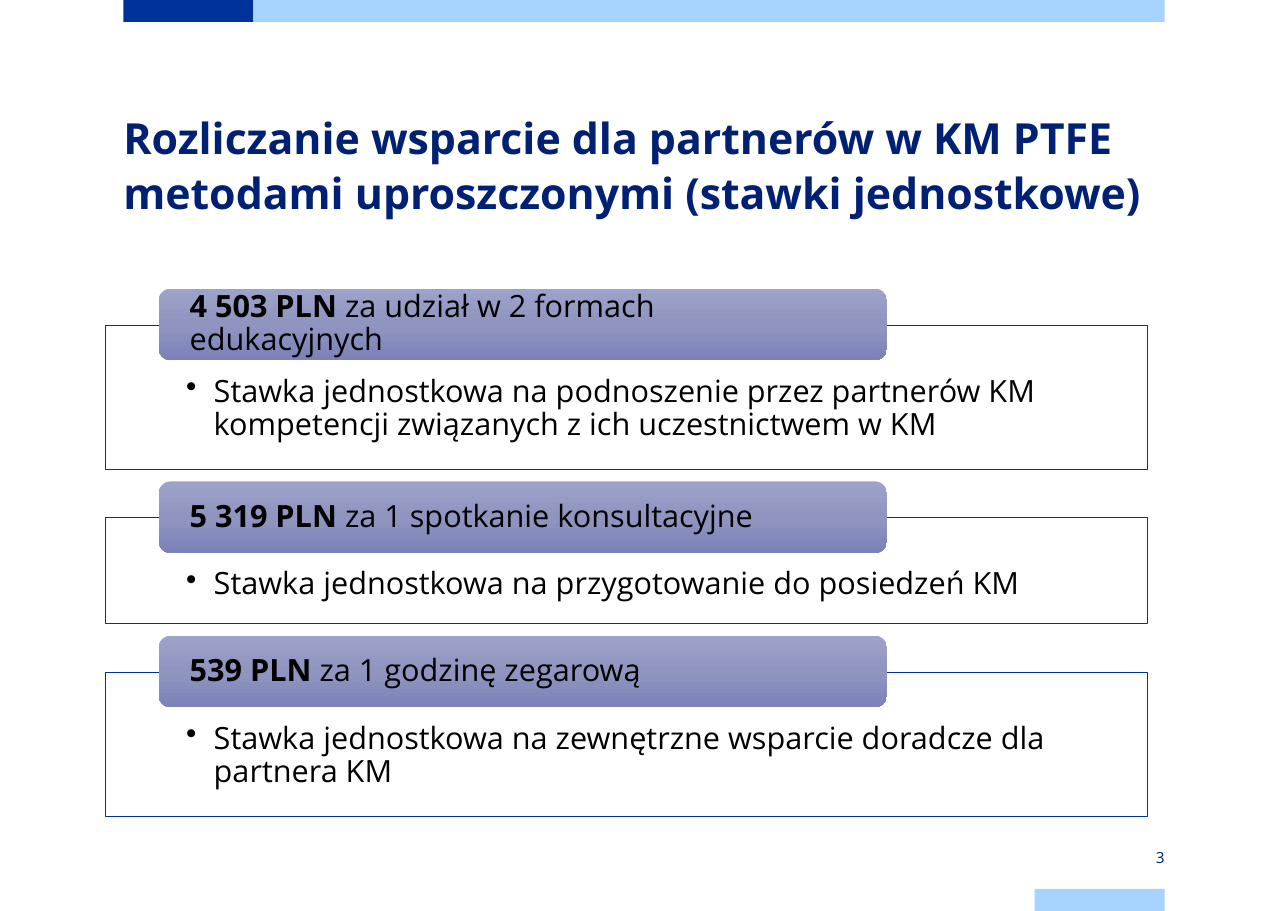
from copy import deepcopy
from dataclasses import dataclass

from lxml import etree
from pptx import Presentation
from pptx import util as u
from pptx.dml.color import RGBColor
from pptx.enum import shapes, text
from pptx.oxml.ns import qn

FONT = "Open Sans"
NAVY = RGBColor(0x00, 0x20, 0x73)
BLUE = RGBColor(0x00, 0x33, 0x99)
SKY = RGBColor(0xA6, 0xD3, 0xFF)
WHITE = RGBColor(0xFF, 0xFF, 0xFF)
BLACK = RGBColor(0x00, 0x00, 0x00)
HEADER_STOPS = (
    (0, RGBColor(0x9D, 0xA2, 0xCA)),
    (0.5, RGBColor(0x90, 0x95, 0xC0)),
    (1, RGBColor(0x7C, 0x82, 0xB8)),
)

PANEL_LEFT, PANEL_WIDTH = 0.96, 9.45
FIRST_PANEL_TOP, PANEL_GAP = 2.95, 0.44
HEADER_RISE = 0.33


@dataclass
class Bar:
    left: float
    top: float
    width: float
    color: RGBColor


@dataclass
class Rate:
    amount: str
    unit: str
    description: str
    panel_height: float


BARS = (
    Bar(1.12, 0, 1.18, BLUE),
    Bar(2.3, 0, 8.27, SKY),
    Bar(9.39, 8.07, 1.18, SKY),
)
RATES = (
    Rate("4 503 PLN ", "za udział w 2 formach edukacyjnych",
         "Stawka jednostkowa na podnoszenie przez partnerów KM "
         "kompetencji związanych z ich uczestnictwem w KM", 1.31),
    Rate("5 319 PLN ", "za 1 spotkanie konsultacyjne",
         "Stawka jednostkowa na przygotowanie do posiedzeń KM", 0.96),
    Rate("539 PLN ", "za 1 godzinę zegarową",
         "Stawka jednostkowa na zewnętrzne wsparcie doradcze dla partnera KM", 1.31),
)


def add_box(page, kind, left: float, top: float, width: float, height: float):
    box = page.shapes.add_shape(kind, *map(u.Inches, (left, top, width, height)))
    box.shadow.inherit = False
    box.line.fill.background()
    return box


def set_frame(box, insets: tuple, anchor):
    """Set left, top, right and bottom insets; return the first paragraph."""
    frame = box.text_frame
    frame.word_wrap = True
    frame.vertical_anchor = anchor
    (frame.margin_left, frame.margin_top,
     frame.margin_right, frame.margin_bottom) = map(u.Inches, insets)
    para = frame.paragraphs[0]
    para.alignment = text.PP_ALIGN.LEFT
    return para


def add_span(para, words: str, size: float, color: RGBColor, bold: bool = False) -> None:
    span = para.add_run()
    span.text = words
    span.font.name = FONT
    span.font.size = u.Pt(size)
    span.font.bold = bold
    span.font.color.rgb = color


def add_bullet(para) -> None:
    props = para._p.get_or_add_pPr()
    props.set("marL", str(u.Inches(0.25)))
    props.set("indent", str(u.Inches(-0.25)))
    etree.SubElement(props, qn("a:buChar")).set("char", "•")


def fill_header(box) -> None:
    box.fill.gradient()
    box.fill.gradient_angle = 270
    stop_list = box._element.spPr.find(".//" + qn("a:gsLst"))
    stop_list.append(deepcopy(stop_list[-1]))
    for stop, (position, color) in zip(box.fill.gradient_stops, HEADER_STOPS):
        stop.position = position
        stop.color.rgb = color


def add_rate(page, rate: Rate, top: float) -> None:
    panel = add_box(page, shapes.MSO_SHAPE.RECTANGLE,
                    PANEL_LEFT, top, PANEL_WIDTH, rate.panel_height)
    panel.fill.solid()
    panel.fill.fore_color.rgb = WHITE
    panel.line.color.rgb = BLUE
    panel.line.width = u.Pt(0.5)
    para = set_frame(panel, (0.73, 0.46, 0.73, 0.16), text.MSO_ANCHOR.TOP)
    para.line_spacing = 0.9
    add_bullet(para)
    add_span(para, rate.description, 20, BLACK)

    header = add_box(page, shapes.MSO_SHAPE.ROUNDED_RECTANGLE,
                     1.44, top - HEADER_RISE, 6.61, 0.65)
    fill_header(header)
    para = set_frame(header, (0.25, 0, 0.25, 0), text.MSO_ANCHOR.MIDDLE)
    para.line_spacing = 0.9
    add_span(para, rate.amount, 20, BLACK, bold=True)
    add_span(para, rate.unit, 20, BLACK)


def add_title(page) -> None:
    box = page.shapes.add_textbox(*map(u.Inches, (1.12, 0.98, 9.45, 1.18)))
    para = set_frame(box, (0, 0, 0, 0), text.MSO_ANCHOR.TOP)
    para.line_spacing = u.Pt(36)
    add_span(para, "Rozliczanie wsparcie dla partnerów w KM PTFE "
             "metodami uproszczonymi (stawki jednostkowe)", 28, NAVY, bold=True)


def add_page_number(page) -> None:
    box = page.shapes.add_textbox(*map(u.Inches, (9.39, 7.68, 1.18, 0.2)))
    para = set_frame(box, (0, 0, 0, 0), text.MSO_ANCHOR.MIDDLE)
    para.alignment = text.PP_ALIGN.RIGHT
    add_span(para, "3", 10, NAVY)


def main() -> None:
    deck = Presentation()
    deck.slide_width, deck.slide_height = u.Inches(11.69), u.Inches(8.27)
    page = deck.slides.add_slide(deck.slide_layouts[6])
    for bar in BARS:
        box = add_box(page, shapes.MSO_SHAPE.RECTANGLE, bar.left, bar.top, bar.width, 0.2)
        box.fill.solid()
        box.fill.fore_color.rgb = bar.color
    add_title(page)
    add_page_number(page)
    top = FIRST_PANEL_TOP
    for rate in RATES:
        add_rate(page, rate, top)
        top += rate.panel_height + PANEL_GAP
    deck.save("out.pptx")


if __name__ == "__main__":
    main()
